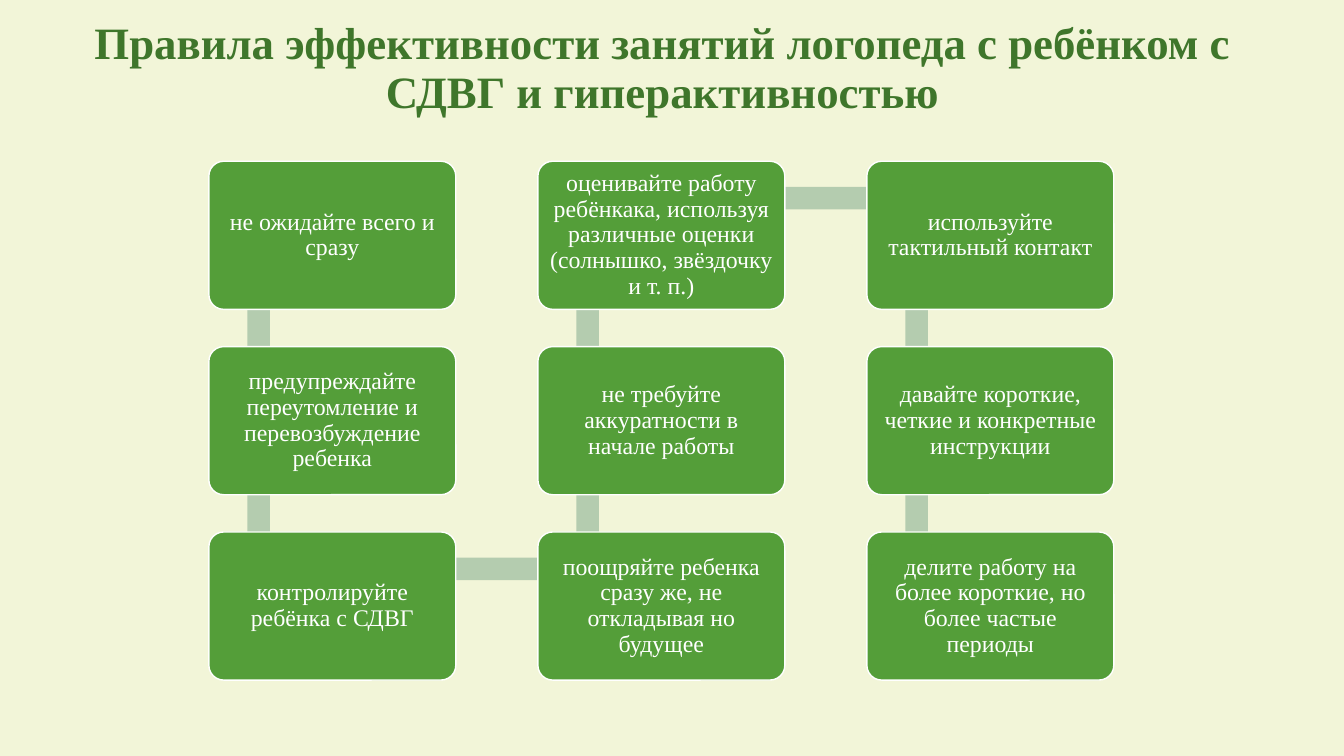
import pptx
import pptx.util
import pptx.dml.color
import pptx.enum.shapes
import pptx.enum.text

Pt = pptx.util.Pt
SHAPES = pptx.enum.shapes.MSO_SHAPE

TITLE = "Правила эффективности занятий логопеда с ребёнком с СДВГ и гиперактивностью"
RULES = [
    "не ожидайте всего и сразу",
    "предупреждайте переутомление и перевозбуждение ребенка",
    "контролируйте ребёнка с СДВГ",
    "поощряйте ребенка сразу же, не откладывая но будущее",
    "не требуйте аккуратности в начале работы",
    "оценивайте работу ребёнкака, используя различные оценки (солнышко, звёздочку и т. п.)",
    "используйте тактильный контакт",
    "давайте короткие, четкие и конкретные инструкции",
    "делите работу на более короткие, но более частые периоды",
]
ROWS = 3
GRID_LEFT, GRID_TOP = 149.2, 115.2
STEP_X, STEP_Y = 235, 132.4
BOX_WIDTH, BOX_HEIGHT = 176.4, 105.8
JOINT_X, JOINT_Y = 35.6, 26.4
BAR = 16


def paint(fill, color):
    fill.solid()
    fill.fore_color.rgb = pptx.dml.color.RGBColor.from_string(color)


def write(frame, text, size, color, bold=False):
    frame.word_wrap = True
    frame.vertical_anchor = pptx.enum.text.MSO_ANCHOR.MIDDLE
    para = frame.paragraphs[0]
    para.alignment = pptx.enum.text.PP_ALIGN.CENTER
    para.line_spacing = 0.9
    span = para.add_run()
    span.text = text
    span.font.name = "Times New Roman"
    span.font.size = Pt(size)
    span.font.bold = bold
    paint(span.font.fill, color)


def add_title(page):
    box = page.shapes.add_textbox(Pt(53.3), Pt(9.4), Pt(840), Pt(80.6))
    write(box.text_frame, TITLE, 32, "3F762B", bold=True)


def add_block(page, kind, left, top, width, height, color):
    block = page.shapes.add_shape(kind, Pt(left), Pt(top), Pt(width), Pt(height))
    block.shadow.inherit = False
    paint(block.fill, color)
    block.line.fill.background()
    return block


def add_bar(page, start, end):
    left = min(start[0], end[0]) + JOINT_X
    top = min(start[1], end[1]) + JOINT_Y
    width = abs(end[0] - start[0])
    height = abs(end[1] - start[1])
    if width:
        top, height = top - BAR / 2, BAR
    else:
        left, width = left - BAR / 2, BAR
    add_block(page, SHAPES.RECTANGLE, left, top, width, height, "B4CCAF")


def add_rule(page, corner, text):
    box = add_block(page, SHAPES.ROUNDED_RECTANGLE, *corner, BOX_WIDTH, BOX_HEIGHT, "549E39")
    box.adjustments[0] = 0.1
    paint(box.line.fill, "FFFFFF")
    box.line.width = Pt(1)
    frame = box.text_frame
    frame.margin_left = frame.margin_right = Pt(5)
    frame.margin_top = frame.margin_bottom = Pt(5)
    write(frame, text, 17, "FFFFFF")


def snake_corner(index):
    column, row = divmod(index, ROWS)
    if column % 2:
        row = ROWS - 1 - row
    return GRID_LEFT + column * STEP_X, GRID_TOP + row * STEP_Y


def main():
    deck = pptx.Presentation()
    deck.slide_width, deck.slide_height = Pt(960), Pt(540)
    page = deck.slides.add_slide(deck.slide_layouts[6])
    paint(page.background.fill, "F2F5D8")
    add_title(page)
    corners = [snake_corner(index) for index in range(len(RULES))]
    for start, end in zip(corners, corners[1:]):
        add_bar(page, start, end)
    for corner, text in zip(corners, RULES):
        add_rule(page, corner, text)
    deck.save("out.pptx")


if __name__ == "__main__":
    main()
